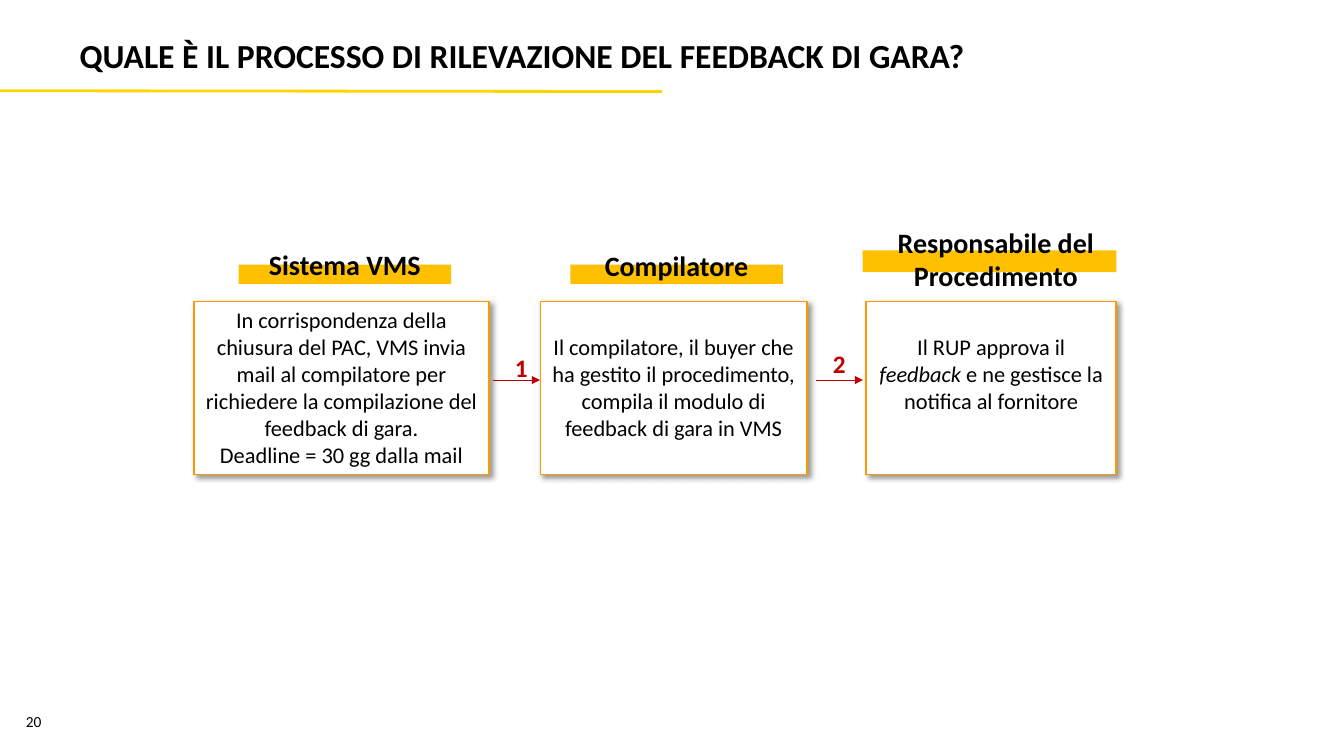
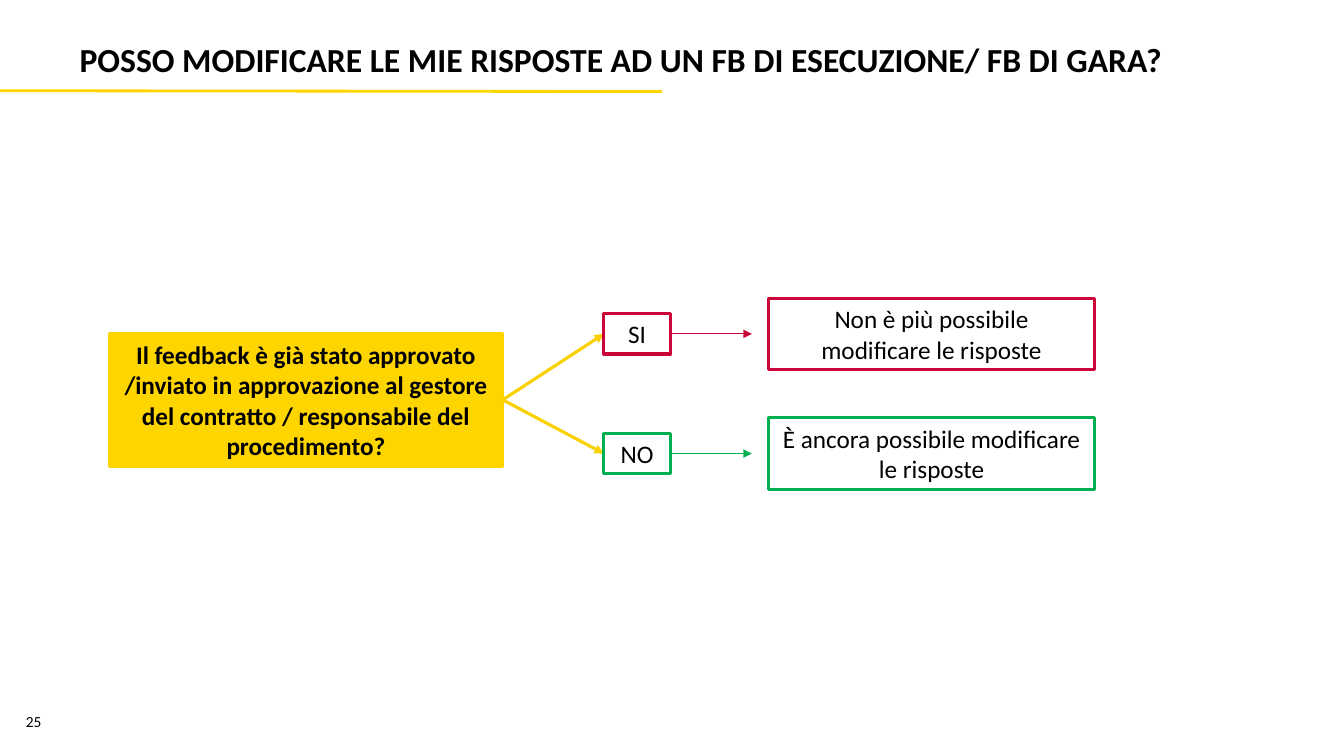
from lxml.etree import SubElement
from pptx import Presentation
from pptx.dml.color import RGBColor
from pptx.enum.shapes import MSO_CONNECTOR as Connector, MSO_SHAPE as Shape
from pptx.enum.text import MSO_ANCHOR as Anchor, PP_ALIGN as Align
from pptx.oxml.ns import qn
from pptx.util import Inches, Pt

BLACK = RGBColor(0x00, 0x00, 0x00)
WHITE = RGBColor(0xFF, 0xFF, 0xFF)
YELLOW = RGBColor(0xFF, 0xD5, 0x00)
BRANCH_YELLOW = RGBColor(0xF9, 0xD0, 0x00)
AMBER = RGBColor(0xFF, 0xC0, 0x00)
ORANGE = RGBColor(0xFF, 0x99, 0x00)
DARK_RED = RGBColor(0xC0, 0x00, 0x00)
CRIMSON = RGBColor(0xCA, 0x05, 0x38)
GREEN = RGBColor(0x00, 0xB0, 0x50)

COLUMNS, ROWS = 160, 90


def write(frame, text, size=18, bold=False, color=BLACK, align=Align.CENTER,
          anchor=Anchor.MIDDLE, spacing=None):
    frame.word_wrap = True
    frame.vertical_anchor = anchor
    for index, line in enumerate(text.split("\n")):
        paragraph = frame.paragraphs[0] if index == 0 else frame.add_paragraph()
        paragraph.alignment = align
        if spacing:
            paragraph.line_spacing = Pt(spacing)
        for part, words in enumerate(line.split("*")):
            run = paragraph.add_run()
            run.text = words
            run.font.name = "Calibri"
            run.font.size = Pt(size)
            run.font.bold = bold
            run.font.italic = part % 2 == 1
            run.font.color.rgb = color


class Deck:
    def __init__(self):
        self.presentation = Presentation()
        self.presentation.slide_width = Inches(13.33)
        self.presentation.slide_height = Inches(7.5)
        self.column = self.presentation.slide_width / COLUMNS
        self.row = self.presentation.slide_height / ROWS
        self.slide = None

    def place(self, *lengths):
        units = (self.column, self.row) * 2
        return [round(length * unit) for length, unit in zip(lengths, units)]

    def new_slide(self, title, number, title_middle):
        blank = self.presentation.slide_layouts[6]
        self.slide = self.presentation.slides.add_slide(blank)
        self.line((0, 10.8), (78.8, 10.9), YELLOW, 2)
        self.label(title, (8.3, title_middle - 2.9, 141, 5.8), size=24, bold=True,
                   align=Align.LEFT, spacing=24)
        self.label(number, (0, 83.3, 8, 4.3), size=11, anchor=Anchor.BOTTOM)

    def label(self, text, area, inset=None, **style):
        frame = self.slide.shapes.add_textbox(*self.place(*area)).text_frame
        if inset is not None:
            frame.margin_left = frame.margin_right = inset
        write(frame, text, **style)

    def box(self, area, text="", fill=None, outline=None, width=2.25,
            shadow=False, top_inset=None, **style):
        shape = self.slide.shapes.add_shape(Shape.RECTANGLE, *self.place(*area))
        shape.shadow.inherit = False
        if fill is None:
            shape.fill.background()
        else:
            shape.fill.solid()
            shape.fill.fore_color.rgb = fill
        if outline is None:
            shape.line.fill.background()
        else:
            shape.line.color.rgb = outline
            shape.line.width = Pt(width)
        if shadow:
            self.cast_shadow(shape)
        if top_inset:
            shape.text_frame.margin_top = round(top_inset * self.row)
        if text:
            write(shape.text_frame, text, **style)

    def cast_shadow(self, shape):
        effects = shape._element.spPr.find(qn("a:effectLst"))
        outer = SubElement(effects, qn("a:outerShdw"), blurRad=str(Pt(4)),
                           dist=str(Pt(3)), dir="2700000", algn="tl", rotWithShape="0")
        tint = SubElement(outer, qn("a:srgbClr"), val=str(BLACK))
        SubElement(tint, qn("a:alpha"), val="40000")

    def line(self, start, end, color, width, arrow=False):
        link = self.slide.shapes.add_connector(
            Connector.STRAIGHT, *self.place(*start, *end))
        link.line.color.rgb = color
        link.line.width = Pt(width)
        if arrow:
            SubElement(link.line._get_or_add_ln(), qn("a:tailEnd"), type="triangle")
        SubElement(link._element.spPr, qn("a:effectLst"))


def build_process(deck):
    deck.new_slide("QUALE È IL PROCESSO DI RILEVAZIONE DEL FEEDBACK DI GARA?", "20", 6.96)
    headings = [
        ("Sistema VMS", (28.4, 31.5, 25.3, 2.3), (28.4, 28.8, 25.3, 5.3)),
        ("Compilatore", (67.9, 31.5, 25.3, 2.3), (67.9, 28.9, 25.3, 5.3)),
        ("Responsabile del Procedimento", (102.7, 29.8, 30.2, 2.6),
         (102.7, 26.2, 31.7, 9.2)),
    ]
    for role, band, area in headings:
        deck.box(band, fill=AMBER)
        deck.label(role, area, size=20, bold=True)

    steps = [
        (23.05, 35.2, None, "In corrispondenza della chiusura del PAC, VMS invia mail al "
         "compilatore per richiedere la compilazione del feedback di gara.\n"
         "Deadline = 30 gg dalla mail"),
        (64.35, 31.7, 3.8, "Il compilatore, il buyer che ha gestito il procedimento, "
         "compila il modulo di feedback di gara in VMS"),
        (103.1, 29.8, 3.8, "Il RUP approva il *feedback *e ne gestisce la notifica "
         "al fornitore"),
    ]
    for left, width, top_inset, task in steps:
        deck.box((left, 35.9, width, 20.6), task, fill=WHITE, outline=ORANGE, width=1.25,
                 shadow=True, top_inset=top_inset, size=16, anchor=Anchor.TOP)

    for number, start, end, center, middle in [("1", 58.7, 64.3, 62.05, 43.7),
                                               ("2", 97.2, 102.75, 99.9, 43.3)]:
        deck.line((start, 45.25), (end, 45.25), DARK_RED, 0.75, arrow=True)
        deck.label(number, (center - 1.5, middle - 2.4, 3, 4.8), inset=0,
                   bold=True, color=DARK_RED)


def build_decision(deck):
    deck.new_slide("POSSO MODIFICARE LE MIE RISPOSTE AD UN FB DI ESECUZIONE/ FB DI GARA?",
                   "25", 7.4)
    deck.box((13, 39.75, 46.85, 15.75),
             "Il feedback è già stato approvato /inviato in approvazione al gestore "
             "del contratto / responsabile del procedimento?",
             fill=YELLOW, outline=YELLOW, bold=True)
    answers = [
        ("SI", "Non è più possibile modificare le risposte", CRIMSON, 39.75),
        ("NO", "È ancora possibile modificare le risposte", GREEN, 54),
    ]
    for answer, outcome, color, middle in answers:
        deck.line((59.85, 47.6), (71.9, middle), BRANCH_YELLOW, 2.25, arrow=True)
        deck.box((71.9, middle - 2.4, 7.9, 4.8), answer, outline=color)
        deck.line((79.8, middle), (89.5, middle), color, 0.75, arrow=True)
        deck.box((91.45, middle - 4.25, 38.9, 8.5), outcome, outline=color)


def main():
    deck = Deck()
    build_process(deck)
    build_decision(deck)
    deck.presentation.save("out.pptx")


if __name__ == "__main__":
    main()
